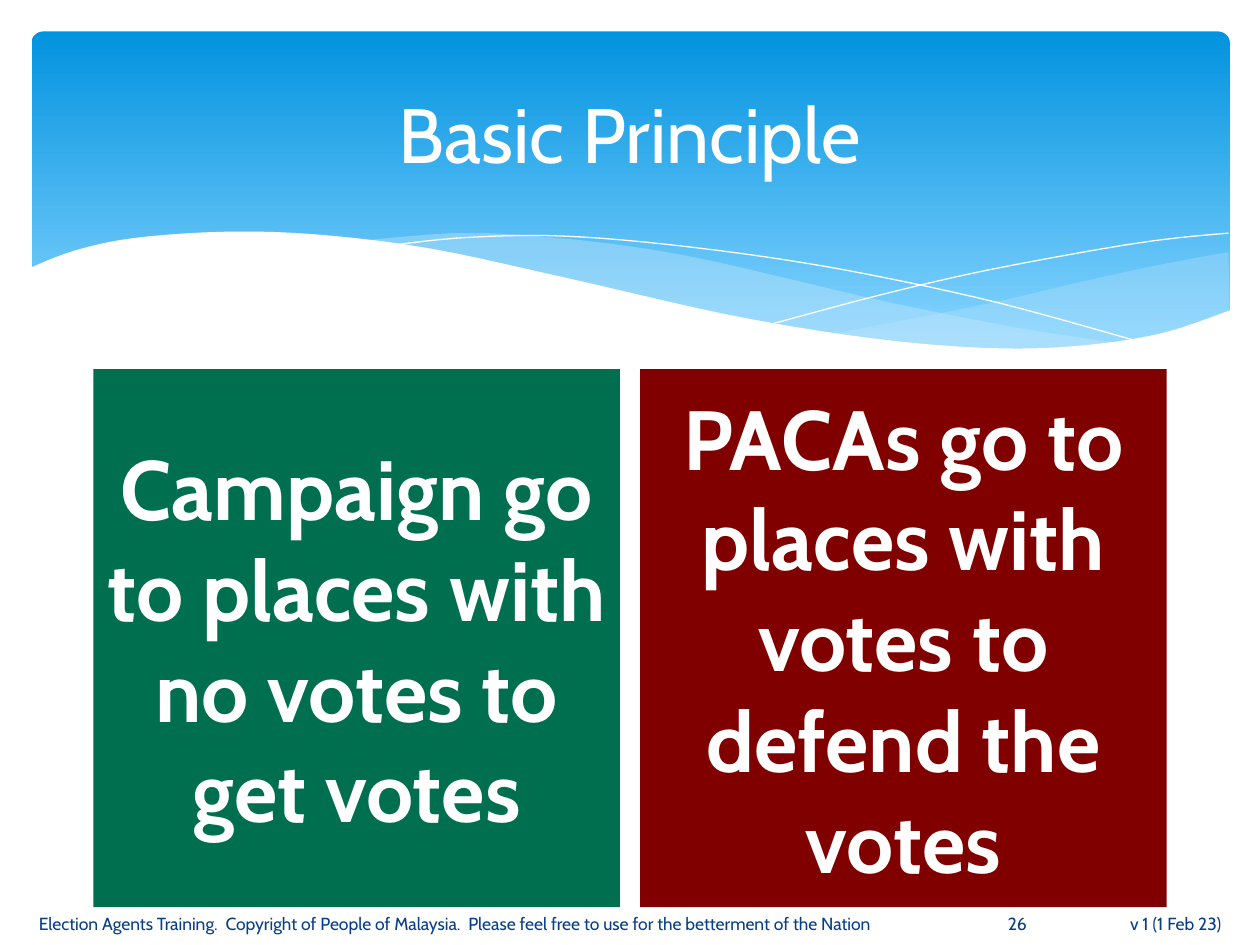
from dataclasses import dataclass
from typing import Optional

import pptx
import pptx.dml.color
import pptx.enum.shapes
import pptx.enum.text
import pptx.oxml.ns
import pptx.util
from lxml import etree

RGBColor = pptx.dml.color.RGBColor
Align = pptx.enum.text.PP_ALIGN
Curve = tuple[tuple[float, float], ...]

WHITE = RGBColor(0xFF, 0xFF, 0xFF)
SKY_TOP = RGBColor(0x02, 0x93, 0xE0)
SKY_BOTTOM = RGBColor(0x83, 0xD3, 0xFE)
PALE_BLUE = RGBColor(0xC6, 0xE7, 0xFC)
NAVY = RGBColor(0x07, 0x3E, 0x87)
GREEN = RGBColor(0x00, 0x6F, 0x50)
MAROON = RGBColor(0x80, 0x00, 0x00)

FONT = "Cabin"
TWO_CONTENT = 3
WIDTH, HEIGHT = pptx.util.Inches(10), pptx.util.Inches(7.5)
COLUMNS, ROWS = 100, 75
CURVE_STEPS = 5


@dataclass(frozen=True)
class Area:
    """A rectangle in columns and rows of the slide grid."""
    left: float
    top: float
    width: float
    height: float

    def emu(self) -> tuple[int, int, int, int]:
        return (x_at(self.left), y_at(self.top),
                x_at(self.width), y_at(self.height))


@dataclass(frozen=True)
class Band:
    """A filled wave bounded by curves that are joined end to end."""
    edges: tuple[Curve, ...]
    color: RGBColor
    opacity: Optional[int] = None


@dataclass(frozen=True)
class Panel:
    left: float
    color: RGBColor
    words: str


@dataclass(frozen=True)
class Footer:
    left: float
    width: float
    align: Align
    words: str


BANNER = Area(2.5, 2.5, 95.1, 27)
TITLE = Area(5, 3.7, 90, 13.7)
PANEL_TOP, PANEL_WIDTH, PANEL_HEIGHT = 29.3, 41.8, 42.7
FOOTER_TOP, FOOTER_HEIGHT = 72, 2.6

RIGHT_BAND = Band((
    ((97.5, 20), (92.1, 21), (86.1, 22.3), (77.9, 24.2), (66.1, 26.5)),
    ((66.1, 26.5), (73.2, 27.4), (80.3, 27.8), (87.2, 27.4),
     (92.1, 26.5), (97.6, 24.7)),
), PALE_BLUE, 29)
MIDDLE_BAND = Band((
    ((89.3, 27.3), (80.7, 26), (70.6, 24), (62.9, 22.2), (55.5, 20.5),
     (48.9, 19.4), (42, 18.7), (36.1, 18.5), (28.6, 19.1)),
    ((28.6, 19.1), (36.2, 20.3), (44.9, 22.2), (56.6, 24.8), (66.5, 26.6),
     (73.6, 27.5), (80.7, 27.8), (89.3, 27.3)),
), PALE_BLUE, 40)
WHITE_WAVE = Band((
    ((97.7, 24.6), (92, 26.5), (85, 27.5), (77.8, 27.6), (68.8, 26.8),
     (57.9, 25), (44.7, 22), (34, 19.7), (25, 18.6), (17.7, 18.4),
     (10.6, 18.9), (5.9, 19.9), (2.3, 21.3)),
    ((2.3, 32.9), (97.7, 32.9)),
), WHITE)
THIN_LINES: tuple[Curve, ...] = (
    ((30.9, 19.5), (36.3, 18.9), (43.3, 18.7), (51, 19.2), (60.8, 20.4),
     (69.5, 21.9), (79.5, 24.1), (90.7, 27.2)),
    ((61.3, 25.7), (69.5, 23.5), (77.6, 21.6), (86.6, 19.9),
     (92.4, 19), (97.5, 18.5)),
)
PANELS = (
    Panel(7.4, GREEN, "Campaign go to places with no votes to get votes"),
    Panel(50.8, MAROON, "PACAs go to places with votes to defend the votes"),
)
FOOTERS = (
    Footer(83.9, 14, Align.RIGHT, "v 1 (1 Feb 23)"),
    Footer(2.1, 72, Align.LEFT,
           "Election Agents Training.  Copyright of People of Malaysia.  "
           "Please feel free to use for the betterment of the Nation"),
    Footer(77.6, 6.3, Align.CENTER, "26"),
)


def x_at(column: float) -> int:
    return round(WIDTH * column / COLUMNS)


def y_at(row: float) -> int:
    return round(HEIGHT * row / ROWS)


def smooth(knots: Curve) -> list[tuple[int, int]]:
    """Points in EMU on a Catmull-Rom spline through the knots."""
    padded = (knots[0], *knots, knots[-1])
    points = [knots[0]]
    for a, b, c, d in zip(padded, padded[1:], padded[2:], padded[3:]):
        for step in range(1, CURVE_STEPS + 1):
            t = step / CURVE_STEPS
            points.append(tuple(
                q + t * (r - p) / 2 + t**2 * (2*p - 5*q + 4*r - s) / 2
                + t**3 * (3*q - p - 3*r + s) / 2
                for p, q, r, s in zip(a, b, c, d)))
    return [(x_at(x), y_at(y)) for x, y in points]


def draw_outline(slide, edges: tuple[Curve, ...], close: bool):
    points = [point for edge in edges for point in smooth(edge)]
    builder = slide.shapes.build_freeform(*points[0], scale=1.0)
    builder.add_line_segments(points[1:], close=close)
    outline = builder.convert_to_shape()
    outline.shadow.inherit = False
    return outline


def draw_band(slide, band: Band) -> None:
    wave = draw_outline(slide, band.edges, close=True)
    wave.fill.solid()
    wave.fill.fore_color.rgb = band.color
    wave.line.fill.background()
    if band.opacity is not None:
        qn = pptx.oxml.ns.qn
        color = wave.element.spPr.find(qn("a:solidFill")).find(qn("a:srgbClr"))
        etree.SubElement(color, qn("a:alpha"), val=str(band.opacity * 1000))


def draw_thin_line(slide, curve: Curve) -> None:
    line = draw_outline(slide, (curve,), close=False)
    line.fill.background()
    line.line.color.rgb = WHITE
    line.line.width = pptx.util.Pt(0)


def draw_banner(slide) -> None:
    banner = slide.shapes.add_shape(
        pptx.enum.shapes.MSO_SHAPE.ROUNDED_RECTANGLE, *BANNER.emu())
    banner.adjustments[0] = 0.034
    banner.shadow.inherit = False
    banner.line.fill.background()
    banner.fill.gradient()
    banner.fill.gradient_angle = 270
    stops = zip(banner.fill.gradient_stops, (0, 0.9), (SKY_TOP, SKY_BOTTOM))
    for stop, position, color in stops:
        stop.position = position
        stop.color.rgb = color


def write(shape, words: str, size: int, color: RGBColor, align: Align,
          bold: bool = False) -> None:
    frame = shape.text_frame
    frame.word_wrap = True
    frame.auto_size = pptx.enum.text.MSO_AUTO_SIZE.NONE
    frame.vertical_anchor = pptx.enum.text.MSO_ANCHOR.MIDDLE
    paragraph = frame.paragraphs[0]
    paragraph.alignment = align
    paragraph.space_before = pptx.util.Pt(0)
    run = paragraph.add_run()
    run.text = words
    run.font.name = FONT
    run.font.size = pptx.util.Pt(size)
    run.font.bold = bold
    run.font.color.rgb = color


def place(placeholder, area: Area) -> None:
    """Move a placeholder to its area, in front of what is drawn so far."""
    (placeholder.left, placeholder.top,
     placeholder.width, placeholder.height) = area.emu()
    placeholder.element.getparent().append(placeholder.element)


def fill_panel(body, panel: Panel) -> None:
    place(body, Area(panel.left, PANEL_TOP, PANEL_WIDTH, PANEL_HEIGHT))
    body.fill.solid()
    body.fill.fore_color.rgb = panel.color
    properties = body.text_frame.paragraphs[0]._p.get_or_add_pPr()
    properties.set("marL", "0")
    properties.set("indent", "0")
    etree.SubElement(properties, pptx.oxml.ns.qn("a:buNone"))
    write(body, panel.words, 48, WHITE, Align.CENTER, bold=True)


def draw_footer(slide, footer: Footer) -> None:
    area = Area(footer.left, FOOTER_TOP, footer.width, FOOTER_HEIGHT)
    box = slide.shapes.add_textbox(*area.emu())
    write(box, footer.words, 10, NAVY, footer.align)


def main() -> None:
    deck = pptx.Presentation()
    deck.slide_width, deck.slide_height = WIDTH, HEIGHT
    slide = deck.slides.add_slide(deck.slide_layouts[TWO_CONTENT])
    title, *bodies = slide.placeholders

    draw_banner(slide)
    for band in (RIGHT_BAND, MIDDLE_BAND):
        draw_band(slide, band)
    for curve in THIN_LINES:
        draw_thin_line(slide, curve)
    draw_band(slide, WHITE_WAVE)

    place(title, TITLE)
    write(title, "Basic Principle", 44, WHITE, Align.CENTER)
    for footer in FOOTERS:
        draw_footer(slide, footer)
    for body, panel in zip(bodies, PANELS):
        fill_panel(body, panel)
    deck.save("out.pptx")


if __name__ == "__main__":
    main()
